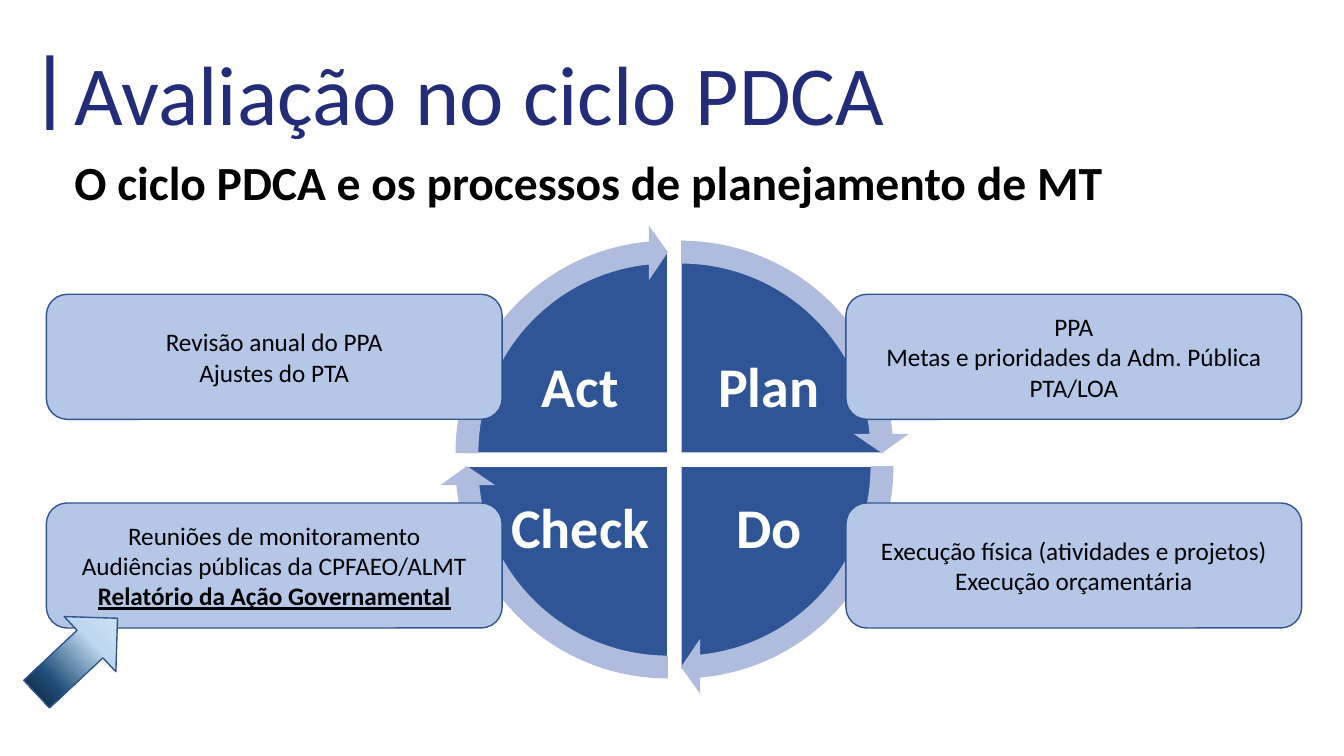
from lxml import etree
from pptx import Presentation
from pptx.dml.color import RGBColor
from pptx.enum.shapes import MSO_SHAPE
from pptx.enum.text import MSO_ANCHOR, MSO_AUTO_SIZE, PP_ALIGN
from pptx.oxml.ns import qn
from pptx.util import Inches, Pt


def rgb(hex_color):
    return RGBColor.from_string(hex_color)


def write(shape, lines, size, color, bold=False, align=PP_ALIGN.CENTER,
          anchor=MSO_ANCHOR.MIDDLE):
    frame = shape.text_frame
    frame.word_wrap = True
    frame.auto_size = MSO_AUTO_SIZE.NONE
    frame.vertical_anchor = anchor
    for number, line in enumerate(lines):
        paragraph = frame.add_paragraph() if number else frame.paragraphs[0]
        paragraph.alignment = align
        run = paragraph.add_run()
        run.text = line
        run.font.name = "Calibri"
        run.font.size = Pt(size)
        run.font.bold = bold
        run.font.color.rgb = rgb(color)
    return frame


NAVY, BLUE, PALE, SOFT, EDGE = "232C79", "2F5597", "B0BCDE", "B4C7E7", "325491"

prs = Presentation()
prs.slide_width, prs.slide_height = Inches(13.33), Inches(7.5)
slide = prs.slides.add_slide(prs.slide_layouts[5])
shapes = slide.shapes

# Title, accent bar and subtitle
title = shapes.title
title.left, title.top = Inches(0.64), Inches(0.36)
title.width, title.height = Inches(11.6), Inches(1.11)
write(title, ["Avaliação no ciclo PDCA"], 60, NAVY, align=PP_ALIGN.LEFT,
      anchor=MSO_ANCHOR.TOP)

accent = shapes.add_shape(MSO_SHAPE.RECTANGLE, Inches(0.46), Inches(0.55),
                          Inches(0.07), Inches(0.74))
accent.shadow.inherit = False
accent.fill.solid()
accent.fill.fore_color.rgb = rgb(NAVY)
accent.line.fill.background()

subtitle = shapes.add_textbox(Inches(0.64), Inches(1.47), Inches(12.27), Inches(0.67))
write(subtitle, ["O ciclo PDCA e os processos de planejamento de MT"], 34, "000000",
      bold=True, align=PP_ALIGN.JUSTIFY, anchor=MSO_ANCHOR.TOP)

# PDCA wheel: stage, column, row, start angle (a quarter turn is 54 units)
QUARTER = 54
stages = [("Plan", 1, 0, 3 * QUARTER), ("Do", 1, 1, 0),
          ("Check", 0, 1, QUARTER), ("Act", 0, 0, 2 * QUARTER)]
wheel = shapes.add_group_shape().shapes

for stage, col, row, start in stages:
    sector = wheel.add_shape(MSO_SHAPE.PIE, Inches(4.61 + 0.13 * col),
                             Inches(2.48 + 0.13 * row), Inches(4.03), Inches(4.03))
    sector.adjustments[0] = start
    sector.adjustments[1] = (start + QUARTER) % (4 * QUARTER)
    sector.shadow.inherit = False
    sector.fill.solid()
    sector.fill.fore_color.rgb = rgb(BLUE)
    sector.line.color.rgb = rgb("FFFFFF")
    sector.line.width = Pt(1)

    label = wheel.add_textbox(Inches(5.01 + 1.87 * col), Inches(3.31 + 1.4 * row),
                              Inches(1.49), Inches(1.1))
    frame = write(label, [stage], 40, "FFFFFF", bold=True)
    frame.margin_left = frame.margin_right = Inches(0.06)
    frame.margin_top = frame.margin_bottom = Inches(0.06)
    frame.paragraphs[0].line_spacing = 0.9

# Arrows around the wheel
for stage, col, row, start in stages:
    turn = wheel.add_shape(MSO_SHAPE.CIRCULAR_ARROW, Inches(4.36 + 0.13 * col),
                           Inches(2.23 + 0.13 * row), Inches(4.53), Inches(4.53))
    for index, value in enumerate([0.05, 3.28, start + 50.73, start, 0.06]):
        turn.adjustments[index] = value
    turn.shadow.inherit = False
    turn.fill.solid()
    turn.fill.fore_color.rgb = rgb(PALE)
    turn.line.fill.background()

# Planning processes beside each stage
processes = [
    (1, 0, ["PPA", "Metas e prioridades da Adm. Pública", "PTA/LOA"]),
    (0, 0, ["Revisão anual do PPA", "Ajustes do PTA"]),
    (1, 1, ["Execução física (atividades e projetos)", "Execução orçamentária"]),
    (0, 1, ["Reuniões de monitoramento", "Audiências públicas da CPFAEO/ALMT",
            "Relatório da Ação Governamental"]),
]
for col, row, lines in processes:
    process = shapes.add_shape(MSO_SHAPE.ROUNDED_RECTANGLE, Inches(0.46 + 7.93 * col),
                               Inches(2.92 + 2.07 * row), Inches(4.52), Inches(1.24))
    process.shadow.inherit = False
    process.fill.solid()
    process.fill.fore_color.rgb = rgb(SOFT)
    process.line.color.rgb = rgb(EDGE)
    process.line.width = Pt(1)
    frame = write(process, lines, 18, "000000")

# The report, last line of the last box, is emphasised
report = frame.paragraphs[-1].runs[0]
report.font.bold = True
report.font.underline = True

# Gradient arrow pointing at the report
pointer = shapes.add_shape(MSO_SHAPE.UP_ARROW, Inches(0.39), Inches(5.96),
                           Inches(0.75), Inches(1.1))
pointer.rotation = 46.8
pointer.shadow.inherit = False
pointer.line.color.rgb = rgb(EDGE)
pointer.line.width = Pt(1)
pointer.fill.gradient()
pointer.fill.gradient_angle = 270
stops = pointer.fill._fill._gradFill.find(qn("a:gsLst"))
for stop in list(stops):
    stops.remove(stop)
for percent, color in [(0, "DEEBF7"), (39, "BDD7EE"), (69, "1F4E79"), (100, "000000")]:
    stop = etree.SubElement(stops, qn("a:gs"), pos=str(percent * 1000))
    etree.SubElement(stop, qn("a:srgbClr"), val=color)

prs.save("out.pptx")
